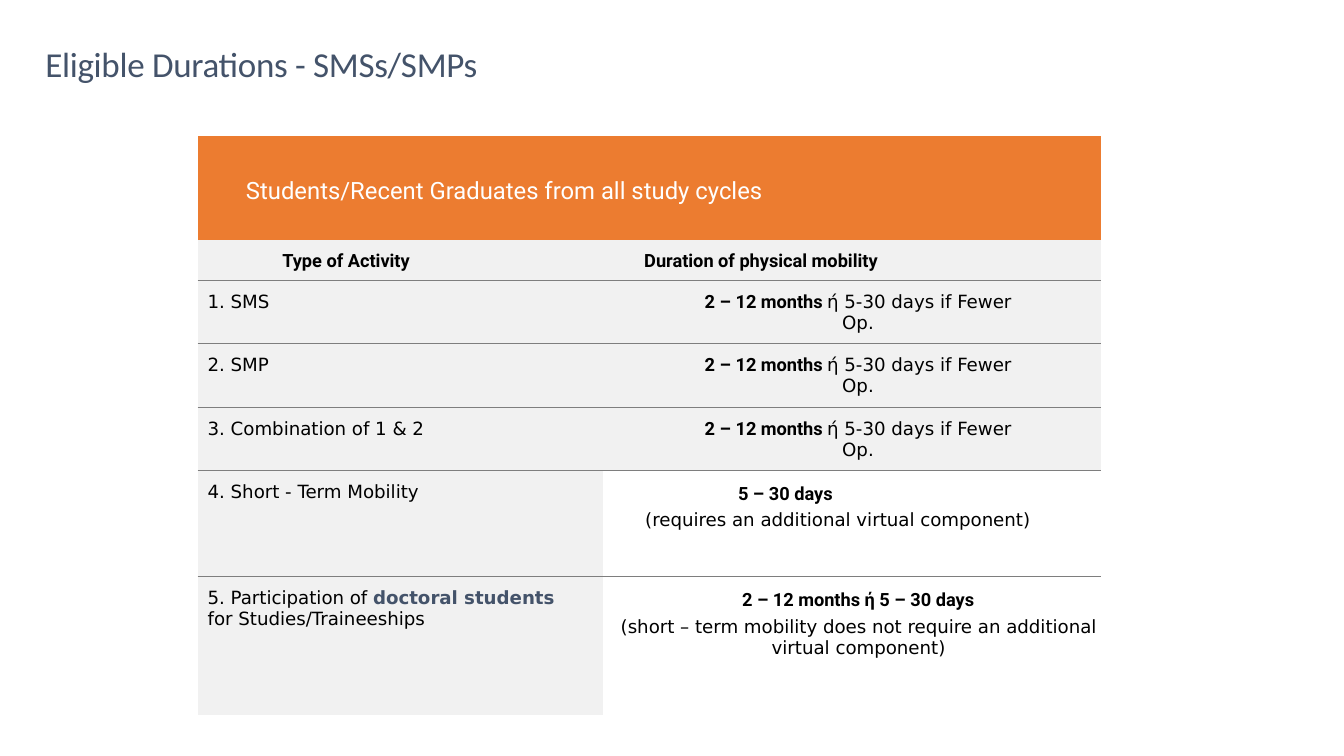
import pptx
import pptx.dml.color
import pptx.enum.text
import pptx.oxml
import pptx.oxml.ns
import pptx.util
from pptx.util import Inches

INK, SLATE, ORANGE, GREY, RULE = "000000", "44536A", "EC7C30", "F1F1F1", "7E7E7E"

TITLE = "Eligible Durations - SMSs/SMPs"
BANNER = "Students/Recent Graduates from all study cycles"
BANNER_HEIGHT = 1.03
COLUMN_WIDTHS = [4.02, 4.94]

# Text styles: font, size, bold, colour
HEADLINE = ("Calibri", 25, False, SLATE)
BANNER_STYLE = ("Roboto", 17, False, "FFFFFF")
STRONG = ("Roboto", 13, True, INK)
PLAIN = ("DejaVu Sans", 13, False, INK)
ACCENT = ("DejaVu Sans", 13, True, SLATE)


def line(*runs, indent=0.1, centred=False, before=0.0, spacing=None):
    return dict(runs=runs, indent=indent, centred=centred, before=before, spacing=spacing)


STANDARD_DURATION = [
    line(("2 – 12 months ", STRONG), ("ή 5-30 days if Fewer", PLAIN),
         indent=0.12, centred=True, before=7.8),
    line(("Op.", PLAIN), indent=0.12, centred=True),
]
SHORT_DURATION = [
    line(("5 – 30 days", STRONG), indent=1.34, before=9.2),
    line(("(requires an additional virtual component)", PLAIN), indent=0.42, spacing=1.22),
]
DOCTORAL_DURATION = [
    line(("2 – 12 months ή 5 – 30 days", STRONG), indent=0.12, centred=True, before=9.2),
    line(("(short – term mobility does not require an additional virtual component)", PLAIN),
         indent=0.13, centred=True, before=4.3),
]

# Row height, activity, duration, fill of the duration cell
ROWS = [
    (0.4, [line(("Type of Activity", STRONG), indent=0.84, before=7.8)],
     [line(("Duration of physical mobility", STRONG), indent=0.41, before=7.8)], GREY),
    (0.63, [line(("1. SMS", PLAIN), before=7.8)], STANDARD_DURATION, GREY),
    (0.63, [line(("2. SMP", PLAIN), before=7.8)], STANDARD_DURATION, GREY),
    (0.63, [line(("3. Combination of 1 & 2", PLAIN), before=7.8)], STANDARD_DURATION, GREY),
    (1.05, [line(("4. Short - Term Mobility", PLAIN), before=7.9)], SHORT_DURATION, None),
    (1.37, [line(("5. Participation of ", PLAIN), ("doctoral students", ACCENT), None,
                 ("for Studies/Traineeships", PLAIN), before=7.9)], DOCTORAL_DURATION, None),
]


def rgb(colour):
    return pptx.dml.color.RGBColor.from_string(colour)


def set_font(font, style):
    font.name, size, font.bold, colour = style
    font.size = pptx.util.Pt(size)
    font.color.rgb = rgb(colour)


def write(frame, lines):
    """Fill a text frame with lines; None among the runs is a line break."""
    for number, content in enumerate(lines):
        paragraph = frame.paragraphs[0] if number == 0 else frame.add_paragraph()
        align = pptx.enum.text.PP_ALIGN
        paragraph.alignment = align.CENTER if content["centred"] else align.LEFT
        paragraph.space_before = pptx.util.Pt(content["before"])
        if content["spacing"]:
            paragraph.line_spacing = content["spacing"]
        properties = paragraph._p.get_or_add_pPr()
        properties.set("marL", str(Inches(content["indent"])))
        properties.set("indent", "0")
        uniform = len(content["runs"]) == 1
        for part in content["runs"]:
            if part is None:
                paragraph.add_line_break()
                continue
            text, style = part
            run = paragraph.add_run()
            run.text = text
            set_font(paragraph.font if uniform else run.font, style)


def set_borders(cell, ruled):
    """Rule the named sides (T, B) and clear the others."""
    properties = cell._tc.get_or_add_tcPr()
    for position, side in enumerate("LRTB"):
        paint = (f'<a:solidFill><a:srgbClr val="{RULE}"/></a:solidFill>'
                 if side in ruled else "<a:noFill/>")
        properties.insert(position, pptx.oxml.parse_xml(
            f'<a:ln{side} {pptx.oxml.ns.nsdecls("a")} w="9525">{paint}</a:ln{side}>'))


def fill_cell(cell, lines, fill, ruled, top):
    cell.margin_left = cell.margin_right = cell.margin_bottom = 0
    cell.margin_top = Inches(top)
    set_borders(cell, ruled)
    if fill:
        cell.fill.solid()
        cell.fill.fore_color.rgb = rgb(fill)
    else:
        cell.fill.background()
    write(cell.text_frame, lines)


def add_title(slide):
    box = slide.shapes.add_textbox(Inches(0.44), Inches(0.4), Inches(4.6), Inches(0.45))
    frame = box.text_frame
    frame.word_wrap = True
    frame.margin_left = frame.margin_right = frame.margin_bottom = 0
    frame.margin_top = Inches(0.14)
    write(frame, [line((TITLE, HEADLINE), indent=0.01, before=9.9, spacing=0.7)])
    frame.paragraphs[0].runs[0]._r.get_or_add_rPr().set("spc", "-20")


def add_durations(slide):
    heights = [BANNER_HEIGHT] + [row[0] for row in ROWS]
    table = slide.shapes.add_table(
        len(heights), len(COLUMN_WIDTHS), Inches(1.96), Inches(1.35),
        Inches(sum(COLUMN_WIDTHS)), Inches(sum(heights))).table
    table.first_row = table.horz_banding = False
    for column, width in zip(table.columns, COLUMN_WIDTHS):
        column.width = Inches(width)
    for row, height in zip(table.rows, heights):
        row.height = Inches(height)

    banner = table.cell(0, 0)
    banner.merge(table.cell(0, 1))
    fill_cell(banner, [line((BANNER, BANNER_STYLE), indent=0.48)], ORANGE, "", 0.41)
    set_borders(table.cell(0, 1), "")
    for number, (_, activity, duration, duration_fill) in enumerate(ROWS, 1):
        ruled = ("T" if number > 1 else "") + ("B" if number < len(ROWS) else "")
        fill_cell(table.cell(number, 0), activity, GREY, ruled, 0.11)
        fill_cell(table.cell(number, 1), duration, duration_fill, ruled,
                  0.11 if duration_fill else 0.13)


def main():
    deck = pptx.Presentation()
    deck.slide_width, deck.slide_height = Inches(13.33), Inches(7.5)
    slide = deck.slides.add_slide(deck.slide_layouts[6])
    add_title(slide)
    add_durations(slide)
    deck.save("out.pptx")


if __name__ == "__main__":
    main()
